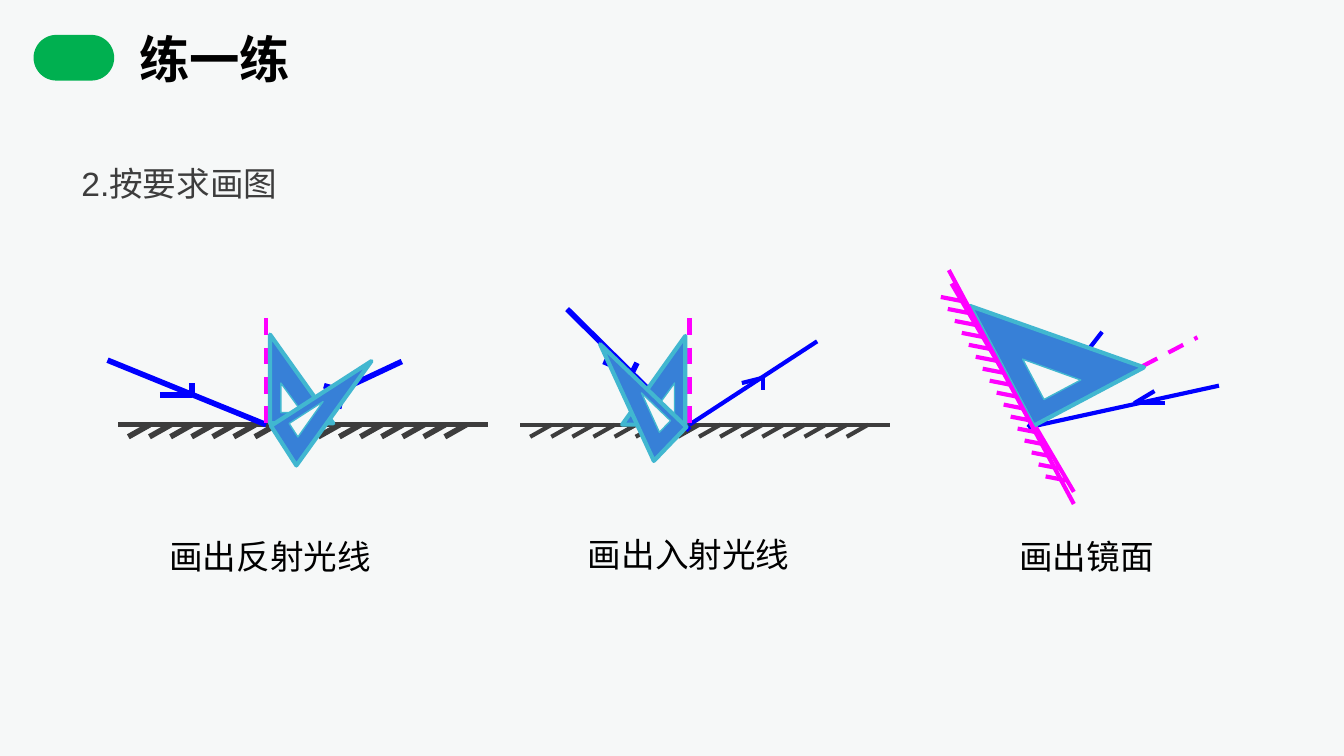
from dataclasses import dataclass
from lxml.etree import SubElement
from pptx import Presentation
from pptx.dml.color import RGBColor as Color
from pptx.enum.dml import MSO_LINE as Dash
from pptx.enum.shapes import MSO_CONNECTOR as Connector, MSO_SHAPE as Shape
from pptx.enum.text import MSO_ANCHOR as Anchor, PP_ALIGN as Align
from pptx.oxml.ns import qn
from pptx.util import Inches, Pt


@dataclass(frozen=True)
class Theme:
    paper: str = "F6F8F8"
    badge: str = "00B050"
    ink: str = "000000"
    grey: str = "3D3D3D"
    ray: str = "0000FF"
    guide: str = "FF00FF"
    ruler: str = "3780D7"
    edge: str = "41B7D0"
    font: str = "Arial"
    title_size: float = 27
    text_size: float = 18
    thin: float = 0.75
    medium: float = 2.25
    thick: float = 3


THEME = Theme()
WIDTH = Inches(10)
HEIGHT = WIDTH * 9 // 16
COLUMNS = 100
TICKS = 16


def cells(*counts):
    return [round(count * WIDTH / COLUMNS) for count in counts]


def shift(origin, point):
    return origin[0] + point[0], origin[1] + point[1]


def paint(shape, fill, edge=None, weight=THEME.thin):
    shape.shadow.inherit = False
    shape.fill.solid()
    shape.fill.fore_color.rgb = Color.from_string(fill)
    if edge:
        shape.line.color.rgb = Color.from_string(edge)
        shape.line.width = Pt(weight)
    else:
        shape.line.fill.background()


def stroke(holder, origin, start, end, color, weight=THEME.medium, dashed=False):
    ends = cells(*shift(origin, start), *shift(origin, end))
    line = holder.shapes.add_connector(Connector.STRAIGHT, *ends)
    line.line.color.rgb = Color.from_string(color)
    line.line.width = Pt(weight)
    if dashed:
        line.line.dash_style = Dash.DASH
    SubElement(line._element.spPr, qn("a:effectLst"))


def write(box, text, size, color, wrap=True, bold=False):
    frame = box.text_frame
    frame.word_wrap = wrap
    frame.vertical_anchor = Anchor.TOP
    frame.margin_left = frame.margin_right = Inches(0.07)
    frame.margin_top = frame.margin_bottom = Inches(0.04)
    para = frame.paragraphs[0]
    para.alignment = Align.LEFT
    para.space_before = Pt(0)
    span = para.add_run()
    span.text = text
    span.font.name, span.font.size, span.font.bold = THEME.font, Pt(size), bold
    span.font.color.rgb = Color.from_string(color)
    return para


def place(shape, *box):
    shape.left, shape.top, shape.width, shape.height = cells(*box)


def caption(page, origin, offset, width, text):
    box = page.shapes.add_textbox(*cells(*shift(origin, offset), width, 3.8))
    write(box, text, THEME.text_size, THEME.ink, wrap=False)


def mirror(page, origin, start, end, first, step, tick, color, weight):
    group = page.shapes.add_group_shape()
    stroke(group, origin, start, end, color, weight)
    for index in range(TICKS):
        root = first[0] + index * step[0], first[1] + index * step[1]
        stroke(group, origin, root, shift(root, tick), color, weight)


def flat_mirror(page, origin, left, weight):
    mirror(page, origin, (left, 11.6), (left + 27.5, 11.6), (left + 2.35, 11.6),
           (1.57, 0), (-1.6, 0.9), THEME.grey, weight)


def ray(page, origin, start, end, tip, barbs, weight=THEME.medium):
    group = page.shapes.add_group_shape()
    stroke(group, origin, start, end, THEME.ray, weight)
    for barb in barbs:
        stroke(group, origin, barb, tip, THEME.ray, weight)


def normal(page, origin, start, end):
    stroke(page, origin, start, end, THEME.guide, dashed=True)


def set_square(page, origin, outer, inner, turn=0, mirrored=False):
    group = page.shapes.add_group_shape()
    looks = ((outer, THEME.ruler, THEME.medium), (inner, THEME.paper, THEME.thin))
    for (left, top, wide, high), fill, weight in looks:
        box = cells(*shift(origin, (left, top)), wide, high)
        part = group.shapes.add_shape(Shape.RIGHT_TRIANGLE, *box)
        paint(part, fill, THEME.edge, weight)
        part.rotation = turn
        if mirrored:
            part._element.spPr.xfrm.set("flipH", "1")


def heading(page):
    badge = page.shapes.add_shape(Shape.ROUNDED_RECTANGLE, *cells(2.5, 2.6, 6, 3.4))
    badge.adjustments[0] = 0.5
    paint(badge, THEME.badge)
    title, body = page.placeholders
    place(title, 9.65, 1.7, 34.4, 5.3)
    write(title, "练一练", THEME.title_size, THEME.ink, bold=True)
    place(body, 5.35, 11.75, 46.8, 3.8)
    para = write(body, "2.按要求画图", THEME.text_size, THEME.grey)
    layout = para._p.get_or_add_pPr()
    layout.set("marL", "0")
    layout.set("indent", "0")
    SubElement(layout, qn("a:buNone"))


def reflected_figure(page, origin):
    flat_mirror(page, origin, 0.8, THEME.thick)
    ray(page, origin, (0, 6.8), (11.8, 11.6), (6.3, 9.4),
        [(3.9, 9.4), (6.3, 8.5)], THEME.thick)
    caption(page, origin, (3.9, 19.5), 16.7, "画出反射光线")
    normal(page, origin, (11.8, 3.7), (11.8, 11.6))
    ray(page, origin, (12.3, 11.4), (21.9, 6.9), (17.5, 9.1),
        [(17.2, 10.4), (16.1, 8.7)], THEME.thick)
    set_square(page, origin, (12.1, 4.9, 4.7, 6.6), (12.9, 8.5, 1.6, 2.2))
    set_square(page, origin, (15.1, 6.3, 3.5, 8.9), (14.5, 9.7, 1.2, 3), turn=57.2)


def incident_figure(page, origin):
    flat_mirror(page, origin, 0, THEME.medium)
    ray(page, origin, (12.6, 11.6), (22.1, 5.4), (18.1, 8.1),
        [(16.5, 8.5), (18.1, 9)])
    caption(page, origin, (4.35, 19.35), 16.7, "画出入射光线")
    normal(page, origin, (12.6, 3.7), (12.6, 11.6))
    ray(page, origin, (3.5, 3), (12.6, 12), (8.3, 7.8),
        [(6.2, 6.9), (8.7, 7)], THEME.thick)
    set_square(page, origin, (7.6, 5, 4.7, 6.6), (9.9, 8.5, 1.6, 2.2), mirrored=True)
    set_square(page, origin, (6.2, 5.5, 3.5, 8.9), (9.1, 9.2, 1.2, 3),
               turn=313.8, mirrored=True)


def tilted_mirror_figure(page, origin):
    ray(page, origin, (12, 4.7), (6.5, 11.8), (10.4, 6.9),
        [(8.8, 7.8), (10.4, 7.8)])
    ray(page, origin, (6.5, 11.8), (20.7, 8.7), (14.4, 10),
        [(15.9, 9.1), (16.7, 10)])
    caption(page, origin, (5.15, 19.5), 11.6, "画出镜面")
    normal(page, origin, (7.3, 11.3), (19.1, 5.1))
    mirror(page, origin, (0.8, 1.1), (9.9, 16.6), (1.55, 2.4), (0.52, 0.89),
           (-1.55, -0.3), THEME.guide, THEME.medium)
    set_square(page, origin, (4, 0, 9.3, 10.1), (6.7, 5.8, 3.1, 3.4), turn=332.1)
    stroke(page, origin, (0.6, 0.1), (9.9, 17.5), THEME.guide)


def main():
    deck = Presentation()
    deck.slide_width, deck.slide_height = WIDTH, HEIGHT
    page = deck.slides.add_slide(deck.slide_layouts[1])
    page.background.fill.solid()
    page.background.fill.fore_color.rgb = Color.from_string(THEME.paper)
    heading(page)
    reflected_figure(page, (8, 20))
    incident_figure(page, (38.7, 20))
    tilted_mirror_figure(page, (70, 20))
    deck.save("out.pptx")


if __name__ == "__main__":
    main()
